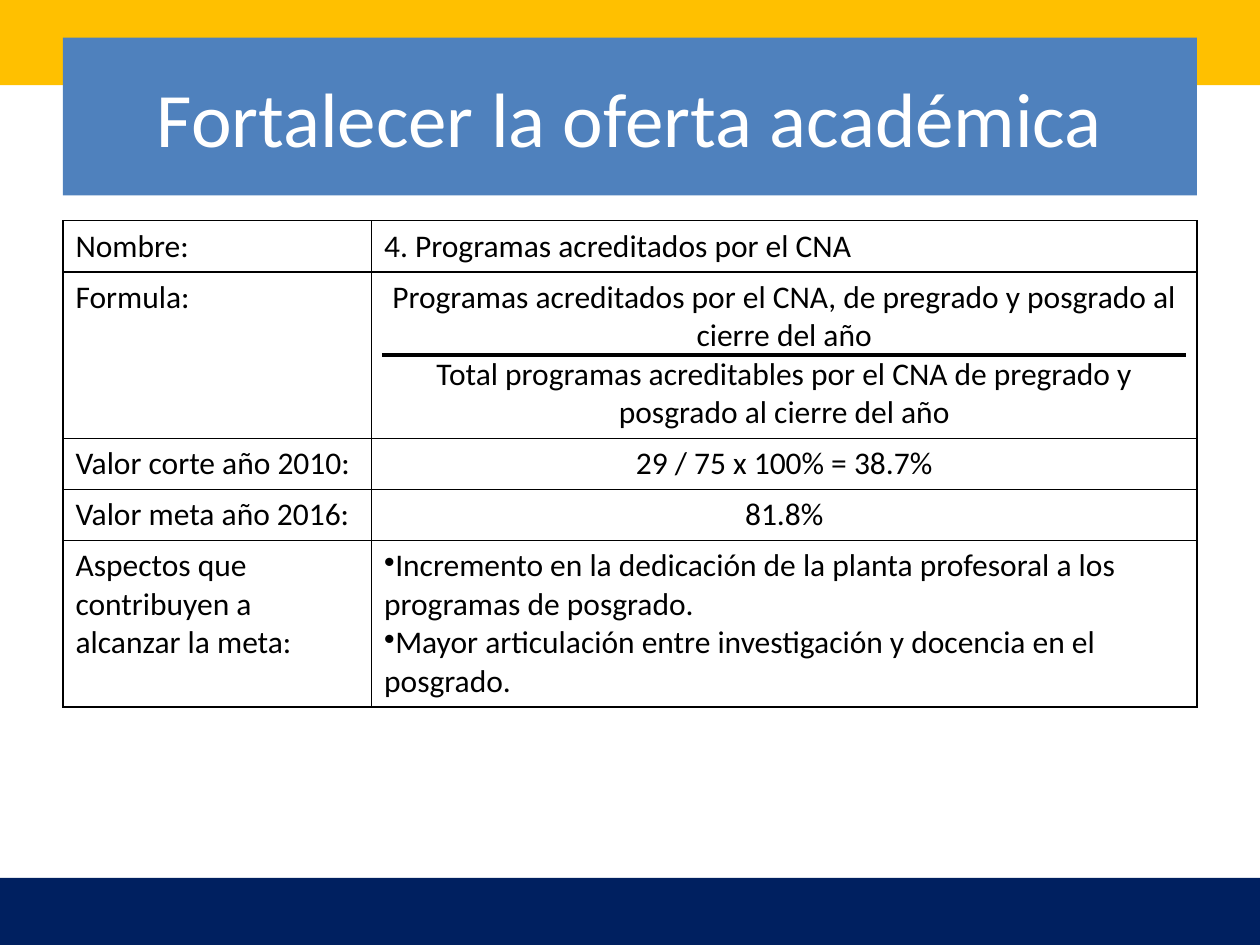
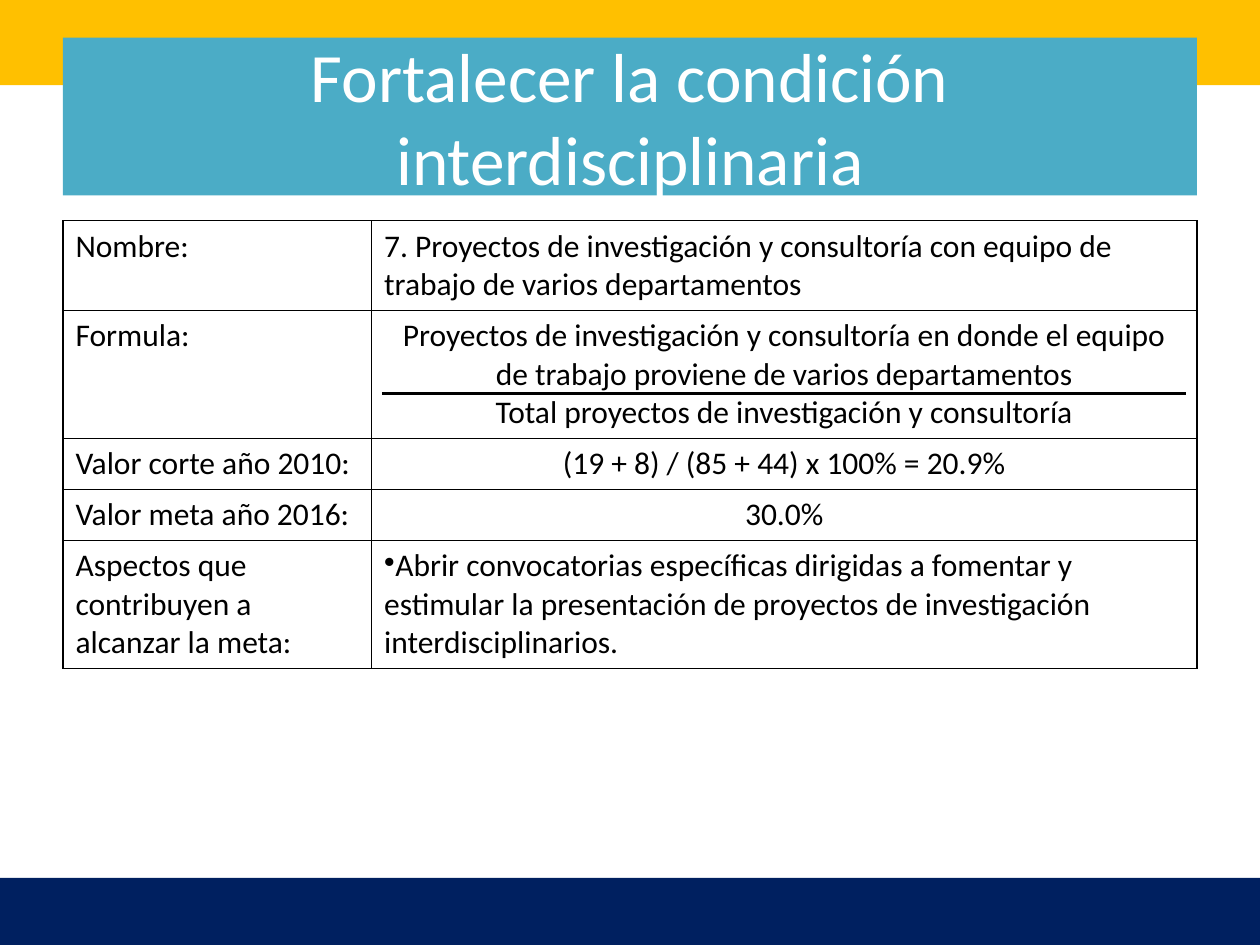
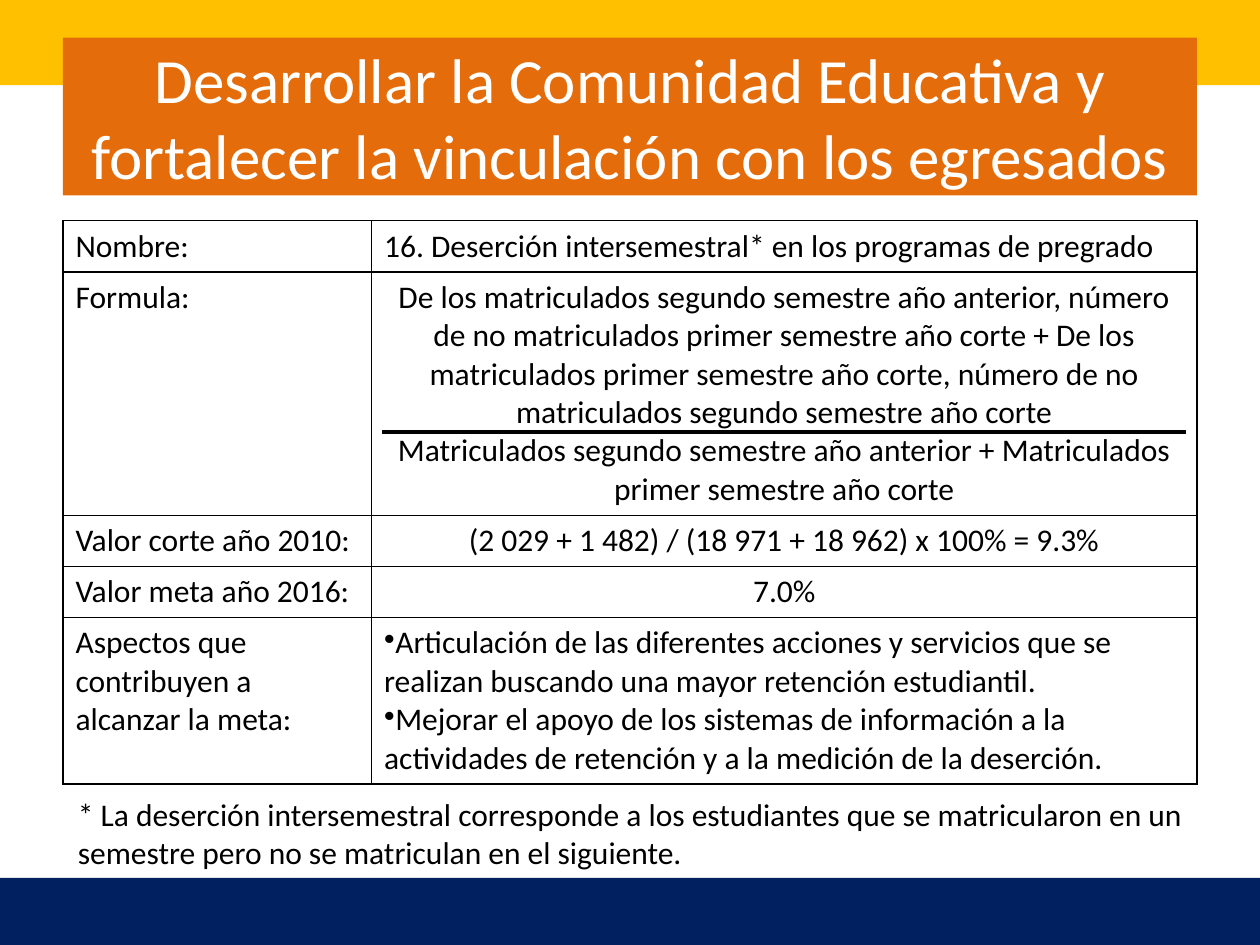
from dataclasses import dataclass

from lxml.etree import SubElement
from pptx import Presentation
from pptx.dml.color import RGBColor
from pptx.enum.shapes import MSO_CONNECTOR, MSO_SHAPE
from pptx.enum.text import MSO_ANCHOR, MSO_AUTO_SIZE, PP_ALIGN
from pptx.oxml import parse_xml
from pptx.oxml.ns import nsdecls, qn
from pptx.shapes.autoshape import Shape
from pptx.slide import Slide
from pptx.table import _Cell
from pptx.text.text import TextFrame
from pptx.util import Cm, Pt

COLORS = {
    "gold": "FFC000",
    "navy": "002060",
    "blue": "4F81BD",
    "teal": "4BACC6",
    "orange": "E46C0A",
    "white": "FFFFFF",
    "black": "000000",
}
FONT = "Calibri"
PAGE_WIDTH, PAGE_HEIGHT = 25.4, 19.05
MARGIN = 1.27
TABLE_TOP = 4.45
LABEL_WIDTH, VALUE_WIDTH = 6.22, 16.64
TABLE_WIDTH = LABEL_WIDTH + VALUE_WIDTH
LINE_HEIGHT = 0.776
CELL_INSET = 0.127
LABELS = (
    "Nombre:",
    "Formula:",
    "Valor corte año 2010:",
    "Valor meta año 2016:",
    "Aspectos que contribuyen a alcanzar la meta:",
)


@dataclass(frozen=True)
class Band:
    left: float
    top: float
    width: float
    height: float
    color: str


@dataclass(frozen=True)
class Indicator:
    """One page; the line counts say how many lines each text wraps to."""
    title: str
    title_size: float
    color: str
    name: str
    numerator: str
    denominator: str
    current: str
    target: str
    aspects: tuple[str, ...]
    name_lines: int
    numerator_lines: int
    denominator_lines: int
    aspect_lines: int
    footnote: str = ""

    def row_lines(self) -> tuple[int, ...]:
        return (self.name_lines, self.numerator_lines + self.denominator_lines,
                1, 1, self.aspect_lines)


BANDS = (
    Band(0, -0.08, PAGE_WIDTH, 1.8, "gold"),
    Band(-0.08, 17.7, 25.48, 1.5, "navy"),
)

INDICATORS = (
    Indicator(
        title="Fortalecer la oferta académica",
        title_size=44,
        color="blue",
        name="4. Programas acreditados por el CNA",
        numerator="Programas acreditados por el CNA, de pregrado y posgrado al "
                  "cierre del año",
        denominator="Total programas acreditables por el CNA de pregrado y "
                    "posgrado al cierre del año",
        current="29 / 75 x 100% = 38.7%",
        target="81.8%",
        aspects=(
            "Incremento en la dedicación de la planta profesoral a los "
            "programas de posgrado.",
            "Mayor articulación entre investigación y docencia en el posgrado.",
        ),
        name_lines=1, numerator_lines=2, denominator_lines=2, aspect_lines=4,
    ),
    Indicator(
        title="Fortalecer la condición interdisciplinaria",
        title_size=39.6,
        color="teal",
        name="7. Proyectos de investigación y consultoría con equipo de "
             "trabajo de varios departamentos",
        numerator="Proyectos de investigación y consultoría en donde el equipo "
                  "de trabajo proviene de varios departamentos",
        denominator="Total proyectos de investigación y consultoría",
        current="(19 + 8) / (85 + 44) x 100% = 20.9%",
        target="30.0%",
        aspects=(
            "Abrir convocatorias específicas dirigidas a fomentar y estimular "
            "la presentación de proyectos de investigación interdisciplinarios.",
        ),
        name_lines=2, numerator_lines=2, denominator_lines=1, aspect_lines=3,
    ),
    Indicator(
        title="Desarrollar la Comunidad Educativa y fortalecer la vinculación "
              "con los egresados",
        title_size=36,
        color="orange",
        name="16. Deserción intersemestral* en los programas de pregrado",
        numerator="De los matriculados segundo semestre año anterior, número de "
                  "no matriculados primer semestre año corte + De los "
                  "matriculados primer semestre año corte, número de no "
                  "matriculados segundo semestre año corte",
        denominator="Matriculados segundo semestre año anterior + Matriculados "
                    "primer semestre año corte",
        current="(2 029 + 1 482) / (18 971 + 18 962) x 100% = 9.3%",
        target="7.0%",
        aspects=(
            "Articulación de las diferentes acciones y servicios que se "
            "realizan buscando una mayor retención estudiantil.",
            "Mejorar el apoyo de los sistemas de información a la actividades "
            "de retención y a la medición de la deserción.",
        ),
        name_lines=1, numerator_lines=4, denominator_lines=2, aspect_lines=4,
        footnote="* La deserción intersemestral corresponde a los estudiantes "
                 "que se matricularon en un semestre pero no se matriculan en "
                 "el siguiente.",
    ),
)


def rgb(name: str) -> RGBColor:
    return RGBColor.from_string(COLORS[name])


def write(frame: TextFrame, *texts: str, size: float = 18, color: str = "black",
          align: PP_ALIGN = PP_ALIGN.LEFT, bullet: bool = False) -> None:
    """Fill the frame with one paragraph for each text."""
    frame.word_wrap = True
    for index, text in enumerate(texts):
        para = frame.add_paragraph() if index else frame.paragraphs[0]
        para.alignment = align
        span = para.add_run()
        span.text = text
        span.font.name = FONT
        span.font.size = Pt(size)
        span.font.color.rgb = rgb(color)
        if bullet:
            properties = para._p.get_or_add_pPr()
            properties.set("marL", "0")
            properties.set("indent", "0")
            SubElement(properties, qn("a:buChar"), char="•")


def add_band(page: Slide, band: Band) -> Shape:
    box = page.shapes.add_shape(MSO_SHAPE.RECTANGLE, Cm(band.left), Cm(band.top),
                                Cm(band.width), Cm(band.height))
    box.shadow.inherit = False
    box.fill.solid()
    box.fill.fore_color.rgb = rgb(band.color)
    box.line.fill.background()
    return box


def add_title(page: Slide, indicator: Indicator) -> None:
    box = add_band(page, Band(MARGIN, 0.76, TABLE_WIDTH, 3.18, indicator.color))
    box.text_frame.vertical_anchor = MSO_ANCHOR.MIDDLE
    write(box.text_frame, indicator.title, size=indicator.title_size,
          color="white", align=PP_ALIGN.CENTER)


def style_cell(cell: _Cell) -> None:
    """Clear the fill and draw a thin black border on all four sides."""
    cell.fill.background()
    properties = cell._tc.get_or_add_tcPr()
    for index, side in enumerate(("lnL", "lnR", "lnT", "lnB")):
        properties.insert(index, parse_xml(
            f'<a:{side} {nsdecls("a")} w="{Pt(1)}"><a:solidFill>'
            f'<a:srgbClr val="{COLORS["black"]}"/></a:solidFill></a:{side}>'))


def add_indicator_table(page: Slide, indicator: Indicator) -> None:
    heights = [lines * LINE_HEIGHT + 2 * CELL_INSET
               for lines in indicator.row_lines()]
    table = page.shapes.add_table(len(LABELS), 2, Cm(MARGIN), Cm(TABLE_TOP),
                                  Cm(TABLE_WIDTH), Cm(sum(heights))).table
    table.first_row = table.horz_banding = False
    for column, width in zip(table.columns, (LABEL_WIDTH, VALUE_WIDTH)):
        column.width = Cm(width)
    centered = {"align": PP_ALIGN.CENTER}
    values = (
        ((indicator.name,), {}),
        ((indicator.numerator, indicator.denominator), centered),
        ((indicator.current,), centered),
        ((indicator.target,), centered),
        (indicator.aspects, {"bullet": True}),
    )
    for row, height, label, (texts, style) in zip(table.rows, heights, LABELS, values):
        row.height = Cm(height)
        label_cell, value_cell = row.cells
        write(label_cell.text_frame, label)
        write(value_cell.text_frame, *texts, **style)
        style_cell(label_cell)
        style_cell(value_cell)

    fraction_y = (TABLE_TOP + heights[0] + CELL_INSET
                  + indicator.numerator_lines * LINE_HEIGHT)
    add_fraction_bar(page, fraction_y)


def add_fraction_bar(page: Slide, y: float) -> None:
    bar = page.shapes.add_connector(MSO_CONNECTOR.STRAIGHT, Cm(7.7), Cm(y),
                                    Cm(23.9), Cm(y))
    bar.line.color.rgb = rgb("black")
    bar.line.width = Pt(2)
    SubElement(bar._element.spPr, qn("a:effectLst"))


def add_footnote(page: Slide, text: str) -> None:
    box = page.shapes.add_textbox(Cm(1.32), Cm(15.9), Cm(22.78), Cm(1.8))
    write(box.text_frame, text)
    box.text_frame.auto_size = MSO_AUTO_SIZE.SHAPE_TO_FIT_TEXT


def main() -> None:
    deck = Presentation()
    deck.slide_width, deck.slide_height = Cm(PAGE_WIDTH), Cm(PAGE_HEIGHT)
    for indicator in INDICATORS:
        page = deck.slides.add_slide(deck.slide_layouts[6])
        for band in BANDS:
            add_band(page, band)
        add_title(page, indicator)
        add_indicator_table(page, indicator)
        if indicator.footnote:
            add_footnote(page, indicator.footnote)
    deck.save("out.pptx")


if __name__ == "__main__":
    main()
